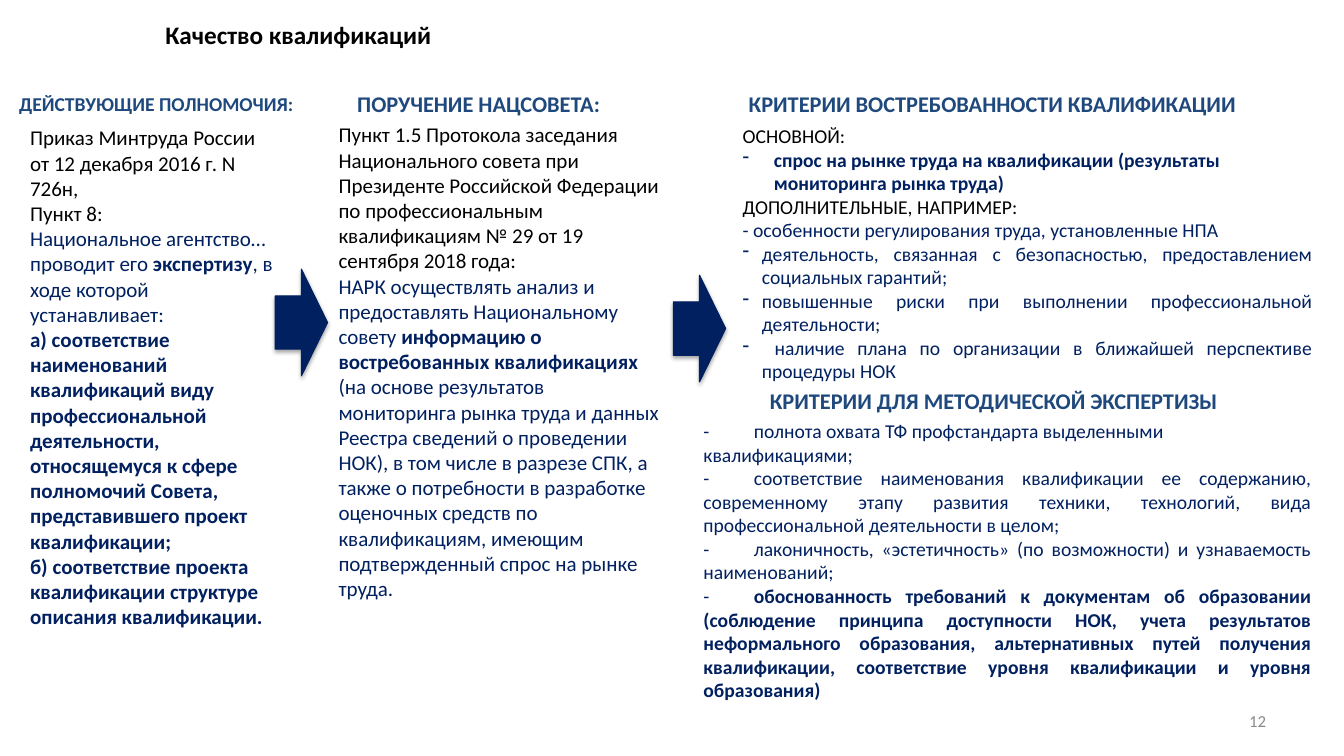
from dataclasses import dataclass

from lxml.etree import SubElement
from pptx import Presentation
from pptx.dml.color import RGBColor
from pptx.enum.shapes import MSO_SHAPE
from pptx.enum.text import MSO_ANCHOR as ANCHOR, MSO_AUTO_SIZE as FIT, PP_ALIGN as ALIGN
from pptx.oxml.ns import qn
from pptx.util import Inches, Pt

WIDTH, HEIGHT = Inches(13.33), Inches(7.5)
COLORS = {"black": "000000", "navy": "002060", "heading": "1F497D", "number": "898989"}
FONT = "Calibri"


@dataclass(frozen=True)
class Area:
    """Position and size in percent of the slide's width and height."""
    left: float
    top: float
    width: float
    height: float

    def emu(self) -> tuple[int, int, int, int]:
        return (round(WIDTH * self.left / 100), round(HEIGHT * self.top / 100),
                round(WIDTH * self.width / 100), round(HEIGHT * self.height / 100))


@dataclass(frozen=True)
class Span:
    text: str
    color: str = "navy"
    bold: bool = False


@dataclass(frozen=True)
class Para:
    spans: tuple[Span, ...]
    align: ALIGN = ALIGN.LEFT
    hang: float = 0  # bullet indent in inches
    tab: float = 0  # tab stop in inches


@dataclass(frozen=True)
class Block:
    area: Area
    size: int
    paras: tuple[Para, ...]
    wrap: bool = True
    anchor: ANCHOR = ANCHOR.TOP
    fit: FIT = FIT.SHAPE_TO_FIT_TEXT


def para(text: str, color: str = "navy", bold: bool = False, **layout) -> Para:
    return Para((Span(text, color, bold),), **layout)


def heading(area: Area, text: str, size: int = 16, align: ALIGN = ALIGN.CENTER,
            wrap: bool = True) -> Block:
    return Block(area, size, (para(text, "heading", True, align=align),), wrap)


def rgb(color: str) -> RGBColor:
    return RGBColor.from_string(COLORS[color])


def write(paragraph, text: str, *, size: int, color: str, bold: bool) -> None:
    run = paragraph.add_run()
    run.text = text
    font = run.font
    font.name, font.size, font.bold = FONT, Pt(size), bold
    font.color.rgb = rgb(color)


def add_indents(paragraph, item: Para) -> None:
    props = paragraph._p.get_or_add_pPr()
    if item.hang:
        props.set("marL", str(Inches(item.hang)))
        props.set("indent", str(-Inches(item.hang)))
        SubElement(props, qn("a:buFontTx"))
        SubElement(props, qn("a:buChar"), char="-")
    if item.tab:
        stops = SubElement(props, qn("a:tabLst"))
        SubElement(stops, qn("a:tab"), pos=str(Inches(item.tab)), algn="l")


def fill_block(shape, block: Block) -> None:
    shape.left, shape.top, shape.width, shape.height = block.area.emu()
    frame = shape.text_frame
    frame.word_wrap = block.wrap
    frame.auto_size = block.fit
    frame.vertical_anchor = block.anchor
    for index, item in enumerate(block.paras):
        paragraph = frame.add_paragraph() if index else frame.paragraphs[0]
        add_indents(paragraph, item)
        paragraph.alignment = item.align
        for span in item.spans:
            write(paragraph, span.text, size=block.size, color=span.color, bold=span.bold)


def add_arrow(slide, area: Area) -> None:
    arrow = slide.shapes.add_shape(MSO_SHAPE.RIGHT_ARROW, *area.emu())
    arrow.fill.solid()
    arrow.fill.fore_color.rgb = arrow.line.color.rgb = rgb("navy")
    arrow.line.width = Pt(0.75)
    arrow.shadow.inherit = False
    effects = arrow._element.spPr.find(qn("a:effectLst"))
    shadow = SubElement(effects, qn("a:outerShdw"), blurRad=str(Pt(3.1)), dist=str(Pt(1.8)),
                        dir="5400000", rotWithShape="0")
    shade = SubElement(shadow, qn("a:srgbClr"), val=COLORS["black"])
    SubElement(shade, qn("a:alpha"), val="35000")


TITLE = Block(Area(11.55, 1.87, 73.65, 5.33), 18,
              (para("Качество квалификаций", "black", True),))
JUSTIFIED = {"align": ALIGN.JUSTIFY}
BULLET = {"hang": 0.19, **JUSTIFIED}
TAB = 0.5

BLOCKS = (
    Block(Area(71.62, 92.67, 23.32, 5.33), 12, (para("12", "number", align=ALIGN.RIGHT),),
          anchor=ANCHOR.MIDDLE, fit=FIT.NONE),
    heading(Area(0.68, 11.47, 26.33, 4.53), "ДЕЙСТВУЮЩИЕ ПОЛНОМОЧИЯ:", 14, ALIGN.LEFT),
    Block(Area(1.5, 15.87, 20.1, 58.53), 15, (
        para("Приказ Минтруда России", "black"),
        para("от 12 декабря 2016 г. N 726н,", "black"),
        para("Пункт 8:", "black"),
        Para((Span("Национальное агентство… проводит его "), Span("экспертизу", bold=True),
              Span(", в ходе которой устанавливает:"))),
        para("а) соответствие наименований квалификаций виду профессиональной деятельности, "
             "относящемуся к сфере полномочий Совета, представившего проект квалификации;",
             bold=True),
        para("б) соответствие проекта квалификации структуре описания квалификации.", bold=True),
    )),
    heading(Area(24.22, 11.2, 22.8, 4.93), "ПОРУЧЕНИЕ НАЦСОВЕТА:"),
    Block(Area(24.45, 15.47, 25.42, 65.33), 15, (
        para("Пункт 1.5 Протокола заседания Национального совета при Президенте Российской "
             "Федерации по профессиональным квалификациям № 29 от 19 сентября 2018 года:",
             "black"),
        Para((Span("НАРК осуществлять анализ и предоставлять Национальному совету "),
              Span("информацию о востребованных квалификациях ", bold=True),
              Span("(на основе результатов мониторинга рынка труда и данных Реестра сведений "
                   "о проведении НОК), в том числе в разрезе СПК, а также о потребности в "
                   "разработке оценочных средств по квалификациям, имеющим подтвержденный "
                   "спрос на рынке труда."))),
    )),
    heading(Area(47.7, 11.33, 52.28, 4.93), "КРИТЕРИИ ВОСТРЕБОВАННОСТИ КВАЛИФИКАЦИИ"),
    Block(Area(54.52, 15.73, 43.88, 35.87), 14, (
        para("ОСНОВНОЙ:", "black"),
        para("спрос на рынке труда на квалификации (результаты мониторинга рынка труда)",
             bold=True, hang=0.31),
        para("ДОПОЛНИТЕЛЬНЫЕ, НАПРИМЕР:", "black"),
        para("- особенности регулирования труда, установленные НПА"),
        para("деятельность, связанная с безопасностью, предоставлением социальных гарантий;",
             **BULLET),
        para("повышенные риски при выполнении профессиональной деятельности;", **BULLET),
        para(" наличие плана по организации в ближайшей перспективе процедуры НОК", **BULLET),
    )),
    heading(Area(56.55, 50.53, 37.8, 4.93), "КРИТЕРИИ ДЛЯ МЕТОДИЧЕСКОЙ ЭКСПЕРТИЗЫ",
            align=ALIGN.LEFT, wrap=False),
    Block(Area(51.6, 54.8, 46.72, 32.8), 14, (
        para("-\tполнота охвата ТФ профстандарта выделенными квалификациями;", tab=TAB),
        para("-\tсоответствие наименования квалификации ее содержанию, современному этапу "
             "развития техники, технологий, вида профессиональной деятельности в целом;",
             tab=TAB, **JUSTIFIED),
        para("-\tлаконичность, «эстетичность» (по возможности) и узнаваемость наименований;",
             tab=TAB, **JUSTIFIED),
        Para((Span("-\t"),
              Span("обоснованность требований к документам об образовании (соблюдение принципа "
                   "доступности НОК, учета результатов неформального образования, "
                   "альтернативных путей получения квалификации, соответствие уровня "
                   "квалификации и уровня образования)", bold=True)),
             tab=TAB, **JUSTIFIED),
    )),
)
ARROWS = (Area(20.48, 35.6, 3.9, 14.13), Area(50.1, 36.4, 3.9, 14.13))


def main() -> None:
    deck = Presentation()
    deck.slide_width, deck.slide_height = WIDTH, HEIGHT
    slide = deck.slides.add_slide(deck.slide_layouts[5])
    fill_block(slide.shapes.title, TITLE)
    for block in BLOCKS:
        fill_block(slide.shapes.add_textbox(*block.area.emu()), block)
    for area in ARROWS:
        add_arrow(slide, area)
    deck.save("out.pptx")


if __name__ == "__main__":
    main()
